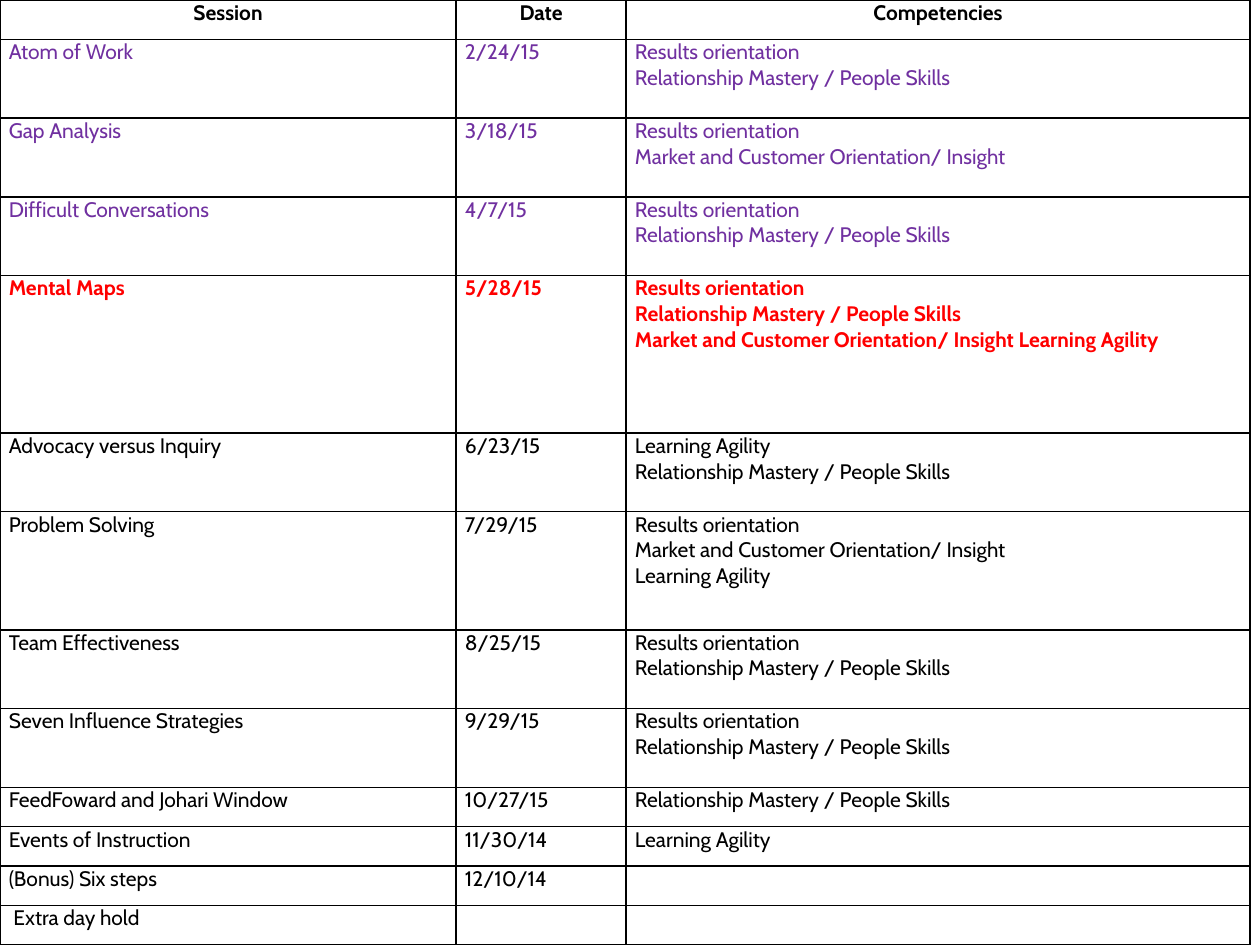
"""Build a slide with the table of sessions, dates and competencies."""
from lxml import etree
from pptx import Presentation
from pptx.dml.color import RGBColor
from pptx.enum.text import PP_ALIGN
from pptx.oxml.ns import qn
from pptx.util import Inches, Pt

CENTER, LEFT = PP_ALIGN.CENTER, PP_ALIGN.LEFT
BLACK = RGBColor(0x00, 0x00, 0x00)
PURPLE = RGBColor(0x70, 0x30, 0xA0)
RED = RGBColor(0xFF, 0x00, 0x00)
WHITE = RGBColor(0xFF, 0xFF, 0xFF)
FONT = "Cabin"

RESULTS = "Results orientation"
PEOPLE = "Relationship Mastery / People Skills"
MARKET = "Market and Customer Orientation/ Insight"
AGILE = "Learning Agility"

HEAD = ("Session", "Date", ["Competencies"])
DONE = [
    ("Atom of Work", "2/24/15", [RESULTS, PEOPLE]),
    ("Gap Analysis", "3/18/15", [RESULTS, MARKET]),
    ("Difficult Conversations", "4/7/15", [RESULTS, PEOPLE]),
]
NEXT = ("Mental Maps", "5/28/15", [RESULTS, PEOPLE, f"{MARKET} {AGILE}"])
LATER = [
    ("Advocacy versus Inquiry", "6/23/15", [AGILE, PEOPLE]),
    ("Problem Solving", "7/29/15", [RESULTS, MARKET, AGILE]),
    ("Team Effectiveness", "8/25/15", [RESULTS, PEOPLE]),
    ("Seven Influence Strategies", "9/29/15", [RESULTS, PEOPLE]),
    ("FeedFoward and Johari Window", "10/27/15", [PEOPLE]),
    ("Events of Instruction", "11/30/14", [AGILE]),
    ("(Bonus) Six steps", "12/10/14", []),
    (" Extra day hold", "", []),
]
GROUPS = [
    ([HEAD], BLACK, True, CENTER),
    (DONE, PURPLE, False, LEFT),
    ([NEXT], RED, True, LEFT),
    (LATER, BLACK, False, LEFT),
]
ROWS = [(row, look) for rows, *look in GROUPS for row in rows]
UNITS = [4 if row is NEXT else max(1, len(row[2])) for row, look in ROWS]
COLS = [3.62, 1.35, 4.95]
HIGH = 7.5


def add_borders(cell):
    props = cell._tc.get_or_add_tcPr()
    for side in ("lnL", "lnR", "lnT", "lnB"):
        line = etree.SubElement(props, qn(f"a:{side}"), w=str(Pt(1)))
        fill = etree.SubElement(line, qn("a:solidFill"))
        etree.SubElement(fill, qn("a:srgbClr"), val=str(BLACK))


def fill_cell(cell, text, color, bold, align):
    cell.margin_left = cell.margin_right = Inches(0.07)
    cell.margin_top = cell.margin_bottom = 0
    add_borders(cell)
    cell.fill.solid()
    cell.fill.fore_color.rgb = WHITE
    cell.text_frame.text = text
    for para in cell.text_frame.paragraphs:
        para.alignment = align
        for run in para.runs:
            font = run.font
            font.name, font.size, font.bold = FONT, Pt(12), bold
            font.color.rgb = color


def main():
    prs = Presentation()
    prs.slide_width, prs.slide_height = Inches(10), Inches(HIGH)
    slide = prs.slides.add_slide(prs.slide_layouts[6])
    frame = slide.shapes.add_table(
        len(ROWS), len(COLS), 0, 0, Inches(sum(COLS)), Inches(HIGH))
    table = frame.table
    table.first_row = table.horz_banding = False
    for col, width in zip(table.columns, COLS):
        col.width = Inches(width)
    for line, unit, (row, look) in zip(table.rows, UNITS, ROWS):
        line.height = Inches(HIGH * unit / sum(UNITS))
        name, date, skills = row
        for cell, text in zip(line.cells, (name, date, "\n".join(skills))):
            fill_cell(cell, text, *look)
    prs.save("out.pptx")


if __name__ == "__main__":
    main()
